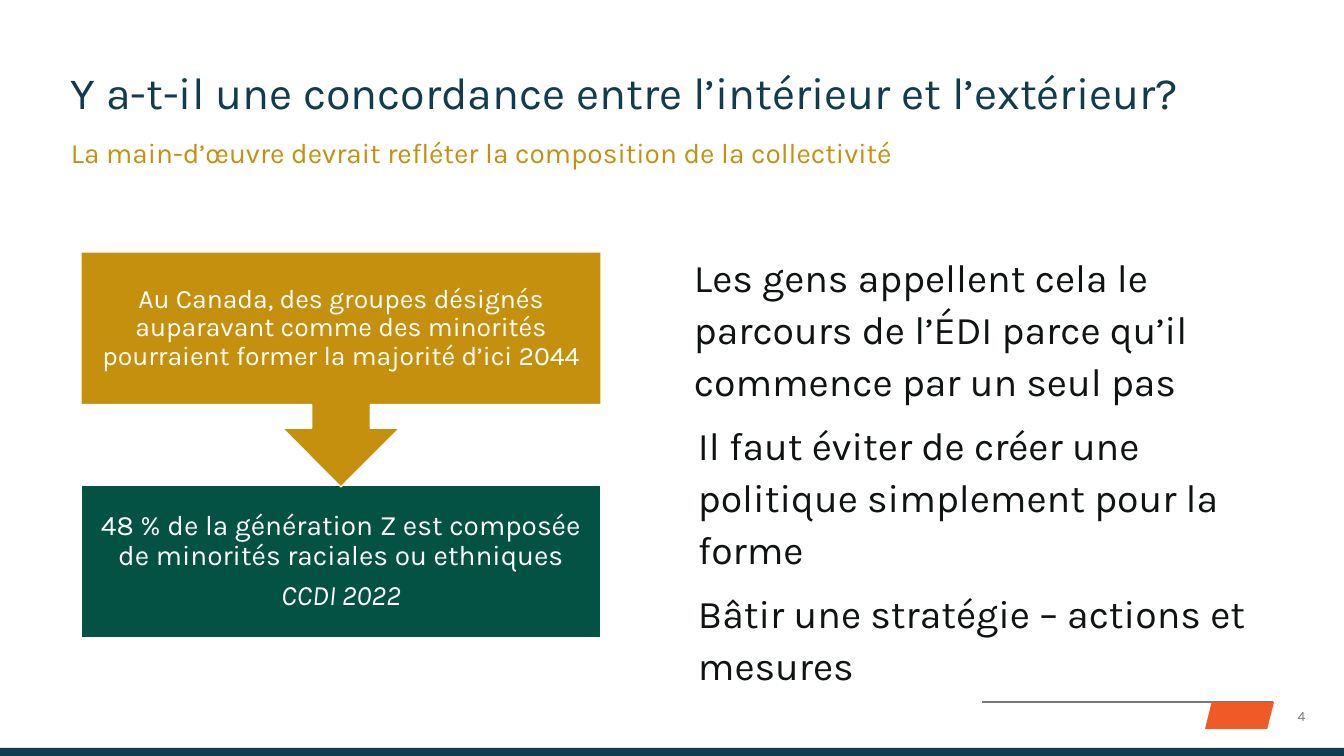
import pptx
import pptx.dml.color
import pptx.enum.shapes
import pptx.enum.text
import pptx.util
from lxml import etree

SHAPE = pptx.enum.shapes.MSO_SHAPE
ANCHOR = pptx.enum.text.MSO_ANCHOR
ALIGN = pptx.enum.text.PP_ALIGN
EMU_PER_PX = 914400 / 100.8
FONT = "Karla"

COLORS = {
    "navy": "0F3C4F", "gold": "C5900D", "green": "035244", "orange": "EF5A27",
    "ink": "0F1313", "grey": "797979", "white": "FFFFFF",
}

TITLE = "Y a-t-il une concordance entre l’intérieur et l’extérieur?"
SUBTITLE = "La main-d’œuvre devrait refléter la composition de la collectivité"
CAUSE = ["Au Canada, des groupes désignés auparavant comme des minorités "
         "pourraient former la majorité d’ici 2044"]
EFFECT = ["48 % de la génération Z est composée de minorités raciales ou ethniques",
          "CCDI 2022"]
JOURNEY = ["Les gens appellent cela le parcours de l’ÉDI parce qu’il commence "
           "par un seul pas"]
ADVICE = ["Il faut éviter de créer une politique simplement pour la forme",
          "Bâtir une stratégie – actions et mesures"]
PAGE_NUMBER = "4"

# left, top, width, height in px
FRAMES = {
    "title": (71, 71, 1203, 61), "subtitle": (71, 132, 1203, 34),
    "effect": (81, 485, 520, 153), "cause": (81, 252, 520, 235),
    "advice": (698, 417, 556, 284), "journey": (694, 249, 569, 284),
    "badge": (1205, 702, 69, 27), "number": (1274, 702, 55, 27),
    "bar": (0, 748, 1344, 8),
}
RULE = (982, 702, 1273, 702)


def px(*lengths):
    return [pptx.util.Emu(round(length * EMU_PER_PX)) for length in lengths]


def color(name):
    return pptx.dml.color.RGBColor.from_string(COLORS[name])


def write(box, texts, size, ink, align=ALIGN.LEFT, anchor=ANCHOR.TOP, inset=(0, 0),
          leading=1.0, gap=0):
    """Fill a box with paragraphs; inset is (sides, top and bottom) in px."""
    frame = box.text_frame
    frame.word_wrap = True
    frame.vertical_anchor = anchor
    frame.margin_left, frame.margin_top = px(*inset)
    frame.margin_right, frame.margin_bottom = px(*inset)
    for index, text in enumerate(texts):
        para = frame.add_paragraph() if index else frame.paragraphs[0]
        para.text = text
        para.alignment = align
        para.line_spacing = leading
        if index:
            para.space_before = pptx.util.Pt(gap)
        para.font.name = FONT
        para.font.size = pptx.util.Pt(size)
        para.font.color.rgb = color(ink)
    return frame


def add_text(page, name, texts, size, ink, **style):
    return write(page.shapes.add_textbox(*px(*FRAMES[name])), texts, size, ink, **style)


def add_block(page, name, kind, fill, line=None):
    block = page.shapes.add_shape(kind, *px(*FRAMES[name]))
    block.shadow.inherit = False
    block.fill.solid()
    block.fill.fore_color.rgb = color(fill)
    if line:
        block.line.color.rgb = color(line)
        block.line.width = pptx.util.Pt(1)
    else:
        block.line.fill.background()
    return block


def add_footer(page):
    rule = page.shapes.add_connector(pptx.enum.shapes.MSO_CONNECTOR.STRAIGHT, *px(*RULE))
    rule.line.color.rgb = color("grey")
    rule.line.width = pptx.util.Pt(0.75)
    etree.SubElement(rule.element.spPr, pptx.oxml.ns.qn("a:effectLst"))

    add_block(page, "badge", SHAPE.PARALLELOGRAM, "orange")
    add_text(page, "number", [PAGE_NUMBER], 10, "grey", align=ALIGN.CENTER,
             anchor=ANCHOR.MIDDLE, inset=(0, 5))
    add_block(page, "bar", SHAPE.RECTANGLE, "navy")


def main():
    deck = pptx.Presentation()
    deck.slide_width, deck.slide_height = px(1344, 756)
    page = deck.slides.add_slide(deck.slide_layouts[6])

    add_footer(page)
    add_text(page, "subtitle", [SUBTITLE], 20, "gold", leading=1.1)
    add_text(page, "title", [TITLE], 32, "navy", leading=0.9)

    centred = {"align": ALIGN.CENTER, "anchor": ANCHOR.MIDDLE, "leading": 0.9}
    effect = add_block(page, "effect", SHAPE.RECTANGLE, "green", "white")
    lines = write(effect, EFFECT, 20, "white", inset=(16, 16), gap=7, **centred)
    lines.paragraphs[-1].font.italic = True
    cause = add_block(page, "cause", SHAPE.DOWN_ARROW_CALLOUT, "gold", "white")
    write(cause, CAUSE, 19, "white", inset=(15, 15), **centred)

    for name, texts in (("advice", ADVICE), ("journey", JOURNEY)):
        add_text(page, name, texts, 28, "ink", leading=1.1, gap=9.2)

    deck.save("out.pptx")


if __name__ == "__main__":
    main()
